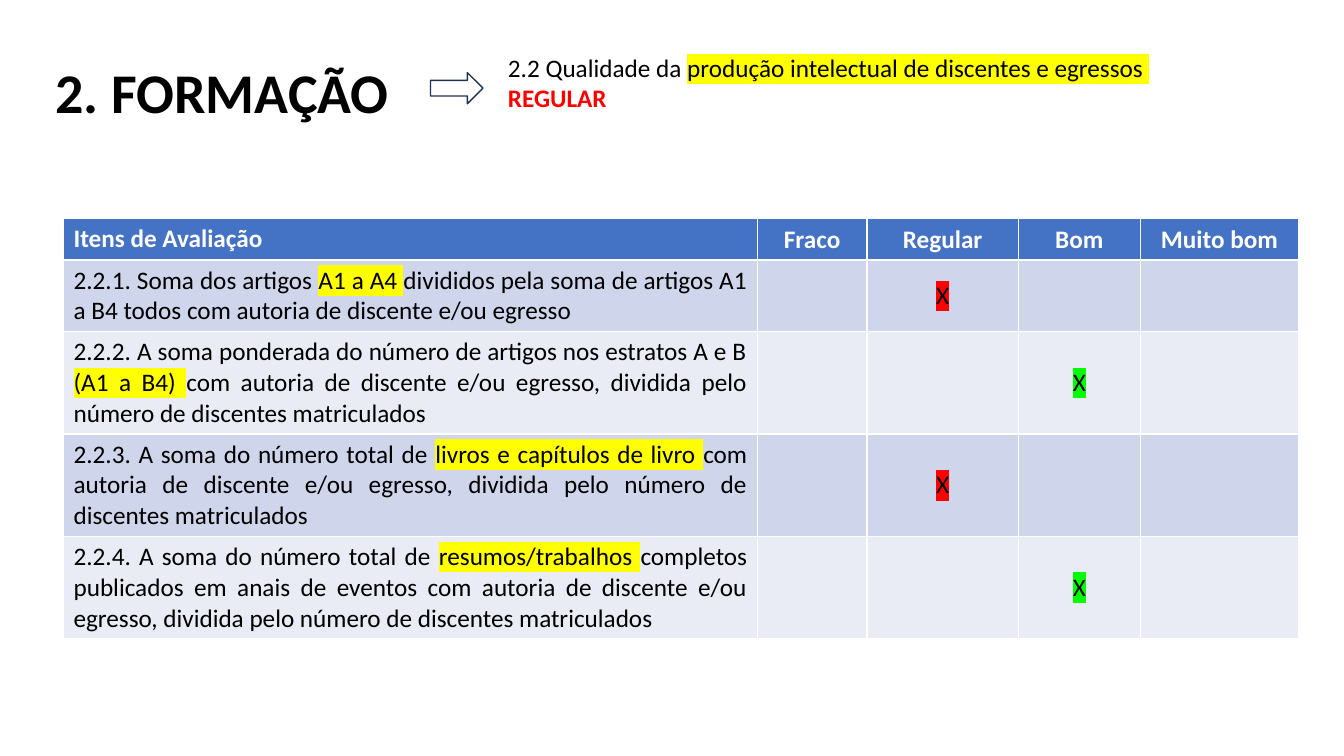
from dataclasses import dataclass

from lxml.etree import SubElement
from pptx import Presentation
from pptx.dml.color import RGBColor as Rgb
from pptx.enum.shapes import MSO_SHAPE as Shape
from pptx.enum.text import MSO_ANCHOR as Anchor, PP_ALIGN as Align
from pptx.oxml.ns import qn
from pptx.util import Inches, Pt

BLACK, WHITE, RED = "000000", "FFFFFF", "FF0000"
YELLOW, GREEN = "FFFF00", "00FF00"
HEAD, BANDS = "4472C4", ("CFD5EA", "E9EBF5")
GRADES = ("Fraco", "Regular", "Bom", "Muito bom")
MARKS = {"Regular": RED, "Bom": GREEN}


@dataclass
class Item:
    lead: str
    key: str
    rest: str
    grade: str
    height: float


ITEMS = (
    Item("2.2.1. Soma dos artigos ", "A1 a A4 ",
         "divididos pela soma de artigos A1 a B4 todos com autoria "
         "de discente e/ou egresso", "Regular", 0.7),
    Item("2.2.2. A soma ponderada do número de artigos nos estratos A e B ",
         "(A1 a B4) ",
         "com autoria de discente e/ou egresso, dividida pelo número "
         "de discentes matriculados", "Bom", 1),
    Item("2.2.3. A soma do número total de ", "livros e capítulos de livro ",
         "com autoria de discente e/ou egresso, dividida pelo número "
         "de discentes matriculados", "Regular", 1),
    Item("2.2.4. A soma do número total de ", "resumos/trabalhos ",
         "completos publicados em anais de eventos com autoria de discente "
         "e/ou egresso, dividida pelo número de discentes matriculados",
         "Bom", 1),
)


def paint(target, color: str) -> None:
    """Give a fill or a line one solid colour."""
    target.solid()
    target.fore_color.rgb = Rgb.from_string(color)


def style(para, size: int = 18, color: str = BLACK, bold: bool = False,
          align=Align.LEFT) -> None:
    para.alignment = align
    font = para.font
    font.name, font.size, font.bold = "Calibri", Pt(size), bold
    paint(font.fill, color)


def add_run(para, text: str, mark: str = "") -> None:
    """Add a run, highlighted when a mark colour is given."""
    run = para.add_run()
    run.text = text
    if mark:
        light = SubElement(run.font._element, qn("a:highlight"))
        SubElement(light, qn("a:srgbClr")).set("val", mark)


def fill_cell(cell, color: str, align=Align.CENTER, ink: str = BLACK,
              bold: bool = False):
    paint(cell.fill, color)
    if align == Align.CENTER:
        cell.vertical_anchor = Anchor.MIDDLE
    para = cell.text_frame.paragraphs[0]
    style(para, color=ink, bold=bold, align=align)
    return para


def add_title(slide) -> None:
    title = slide.shapes.title
    title.left, title.top = Inches(0.45), Inches(0.22)
    title.width, title.height = Inches(11.5), Inches(1.45)
    title.text_frame.vertical_anchor = Anchor.MIDDLE
    para = title.text_frame.paragraphs[0]
    style(para, 40, bold=True)
    para.line_spacing = 0.9
    add_run(para, "2. FORMAÇÃO")


def add_table(slide) -> None:
    widths = (6.88, 1.09, 1.5, 1.21, 1.57)
    heights = (0.41, *(item.height for item in ITEMS))
    table = slide.shapes.add_table(
        len(heights), len(widths), Inches(0.63), Inches(2.17),
        Inches(sum(widths)), Inches(sum(heights))).table
    for col, width in zip(table.columns, widths):
        col.width = Inches(width)
    for row, height in zip(table.rows, heights):
        row.height = Inches(height)

    # Header row
    for col, name in enumerate(("Itens de Avaliação", *GRADES)):
        align = Align.CENTER if col else Align.LEFT
        para = fill_cell(table.cell(0, col), HEAD, align, WHITE, True)
        add_run(para, name)

    # One row per item, with its grade marked
    for row, item in enumerate(ITEMS, 1):
        band = BANDS[(row - 1) % 2]
        para = fill_cell(table.cell(row, 0), band, Align.JUSTIFY)
        add_run(para, item.lead)
        add_run(para, item.key, YELLOW)
        add_run(para, item.rest)
        for col, grade in enumerate(GRADES, 1):
            para = fill_cell(table.cell(row, col), band)
            if grade == item.grade:
                add_run(para, "X", MARKS[grade])


def add_topic(slide) -> None:
    frame = slide.shapes.add_textbox(
        Inches(4.94), Inches(0.47), Inches(8.17), Inches(0.71)).text_frame
    frame.word_wrap = True
    topic = frame.paragraphs[0]
    style(topic)
    add_run(topic, "2.2 Qualidade da ")
    add_run(topic, "produção intelectual de discentes e egressos ", YELLOW)
    result = frame.add_paragraph()
    style(result, color=RED, bold=True)
    add_run(result, "REGULAR")


def add_arrow(slide) -> None:
    arrow = slide.shapes.add_shape(
        Shape.RIGHT_ARROW, Inches(4.27), Inches(0.72),
        Inches(0.52), Inches(0.31))
    arrow.shadow.inherit = False
    arrow.fill.background()
    paint(arrow.line.fill, "1E3256")
    arrow.line.width = Pt(1)


def main() -> None:
    deck = Presentation()
    deck.slide_width, deck.slide_height = Inches(13.33), Inches(7.5)
    slide = deck.slides.add_slide(deck.slide_layouts[5])
    add_title(slide)
    add_table(slide)
    add_topic(slide)
    add_arrow(slide)
    deck.save("out.pptx")


if __name__ == "__main__":
    main()
